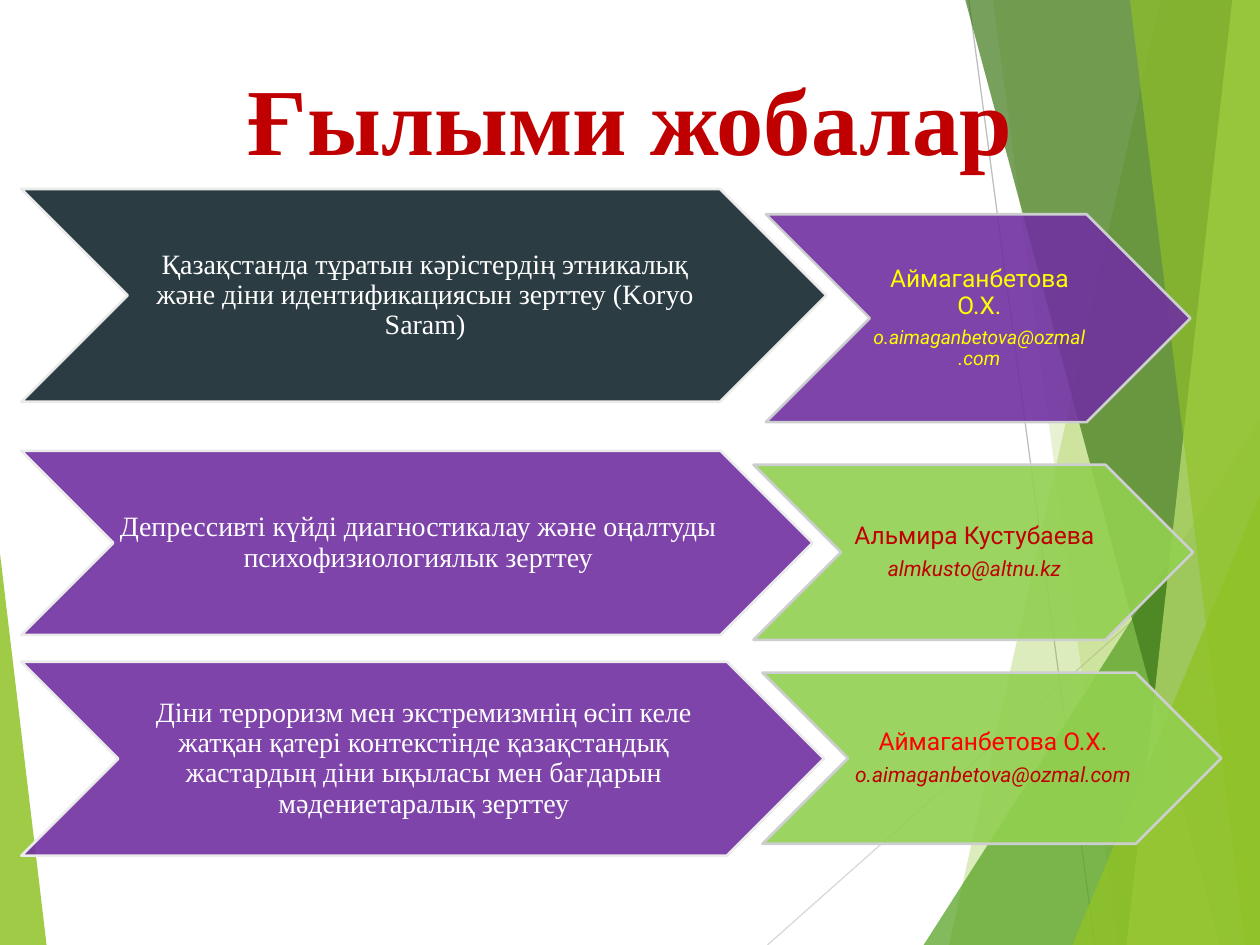
from lxml.etree import SubElement
from pptx import Presentation
from pptx.dml.color import RGBColor
from pptx.enum.shapes import MSO_CONNECTOR, MSO_SHAPE
from pptx.enum.text import MSO_ANCHOR, PP_ALIGN
from pptx.oxml.ns import qn
from pptx.util import Cm, Pt

WIDTH, HEIGHT = 25.4, 19.05

WHITE = RGBColor(0xFF, 0xFF, 0xFF)
YELLOW = RGBColor(0xFF, 0xFF, 0x00)
RED = RGBColor(0xFF, 0x00, 0x00)
DARK_RED = RGBColor(0xC0, 0x00, 0x00)
SLATE = RGBColor(0x2C, 0x3C, 0x43)
PURPLE = RGBColor(0x70, 0x30, 0xA0)
LIGHT_GREEN = RGBColor(0x92, 0xD0, 0x50)
LEAF = RGBColor(0x90, 0xC2, 0x26)
GRASS = RGBColor(0x54, 0xA0, 0x21)
FOREST = RGBColor(0x3F, 0x78, 0x19)
LIME = RGBColor(0xC0, 0xE4, 0x74)
TOPIC_EDGE = RGBColor(0xEB, 0xEB, 0xEB)
LEADER_EDGE = RGBColor(0xCD, 0xCE, 0xCF)
GREY = RGBColor(0xBF, 0xBF, 0xBF)
PALE_GREY = RGBColor(0xD9, 0xD9, 0xD9)

# Bands reaching the right edge: top x, bottom x, colour, opacity in percent
BACK_BANDS = [(23.39, 19.13, LEAF, 30), (20.02, 22.53, LEAF, 20)]
FRONT_BANDS = [(19.46, 24.59, FOREST, 70), (24.84, 22.71, LIME, 70),
               (22.78, 25.1, LEAF, 65)]

# Each line of text: wording, size, colour, italic
PROJECTS = [
    ("Қазақстанда тұратын кәрістердің этникалық және діни "
     "идентификациясын зерттеу (Koryo Saram)",
     (0.43, 3.81, 16.23, 4.29), SLATE, 100,
     [("Аймаганбетова О.Х.", 14, YELLOW, False),
      ("o.aimaganbetova@ozmal.com", 11, YELLOW, True)],
     (15.44, 4.32, 8.56, 4.19), PURPLE),
    ("Депрессивті күйді диагностикалау және оңалтуды "
     "психофизиологиялык зерттеу",
     (0.43, 9.09, 15.95, 3.71), PURPLE, 90,
     [("Альмира Кустубаева", 14, DARK_RED, False),
      ("almkusto@altnu.kz", 12, DARK_RED, True)],
     (15.19, 9.37, 8.86, 3.53), LIGHT_GREEN),
    ("Діни терроризм мен экстремизмнің өсіп келе жатқан қатері контекстінде "
     "қазақстандық жастардың діни ықыласы мен бағдарын мәдениетаралық зерттеу",
     (0.43, 13.34, 16.18, 3.91), PURPLE, 90,
     [("Аймаганбетова О.Х.", 14, RED, False),
      ("o.aimaganbetova@ozmal.com", 12, DARK_RED, True)],
     (15.37, 13.56, 9.25, 3.45), LIGHT_GREEN),
]


def paint(fill, color, opacity):
    """Fill with a solid colour; opacity is in percent."""
    fill.solid()
    fill.fore_color.rgb = color
    if opacity < 100:
        for rgb in fill._xPr.iter(qn("a:srgbClr")):
            SubElement(rgb, qn("a:alpha"), val=str(opacity * 1000))


class ProjectSlide:
    serif, sans = "Times New Roman", "Roboto"

    def __init__(self, deck):
        self.slide = deck.slides.add_slide(deck.slide_layouts[5])
        self.shapes = self.slide.shapes

    def thin_line(self, start, end, color):
        line = self.shapes.add_connector(
            MSO_CONNECTOR.STRAIGHT, *map(Cm, start), *map(Cm, end))
        line.line.color.rgb = color
        line.line.width = Pt(0.75)
        SubElement(line._element.spPr, qn("a:effectLst"))

    def decorate(self, shape, color, opacity):
        shape.shadow.inherit = False
        paint(shape.fill, color, opacity)
        shape.line.fill.background()

    def band(self, top, bottom, color, opacity):
        outline = self.shapes.build_freeform(Cm(top), 0)
        outline.add_line_segments(
            [(Cm(WIDTH), 0), (Cm(WIDTH), Cm(HEIGHT)), (Cm(bottom), Cm(HEIGHT))])
        self.decorate(outline.convert_to_shape(), color, opacity)

    def triangle(self, left, top, width, apex, color, opacity):
        """Triangle standing on the bottom edge; apex runs from 0 to 1."""
        corner = self.shapes.add_shape(
            MSO_SHAPE.ISOSCELES_TRIANGLE,
            Cm(left), Cm(top), Cm(width), Cm(HEIGHT - top))
        corner.adjustments[0] = apex
        self.decorate(corner, color, opacity)

    def title(self, wording):
        title = self.shapes.title
        title.left, title.top = Cm(1.75), Cm(1.02)
        title.width, title.height = Cm(21.9), Cm(2.62)
        title.text_frame.text = wording
        title.text_frame.vertical_anchor = MSO_ANCHOR.BOTTOM
        heading = title.text_frame.paragraphs[0]
        heading.alignment = PP_ALIGN.CENTER
        font = heading.font
        font.name, font.size, font.bold = self.serif, Pt(54), True
        font.color.rgb = DARK_RED
        # Bring the title in front of the decoration
        self.shapes._spTree.append(title._element)

    def chevron(self, box, color, opacity, edge, lines, typeface):
        chevron = self.shapes.add_shape(MSO_SHAPE.CHEVRON, *map(Cm, box))
        chevron.shadow.inherit = False
        paint(chevron.fill, color, opacity)
        chevron.line.color.rgb = edge
        chevron.line.width = Pt(1.5)
        frame = chevron.text_frame
        frame.word_wrap = True
        frame.vertical_anchor = MSO_ANCHOR.MIDDLE
        frame.margin_left, frame.margin_right = Cm(0.05), 0
        frame.margin_top = frame.margin_bottom = Cm(0.03)
        frame.text = "\n".join(wording for wording, *_ in lines)
        for paragraph, (_, size, ink, italic) in zip(frame.paragraphs, lines):
            paragraph.alignment = PP_ALIGN.CENTER
            paragraph.line_spacing = 0.9
            paragraph.space_after = Pt(0.35 * size)
            font = paragraph.font
            font.name, font.size, font.italic = typeface, Pt(size), italic
            font.color.rgb = ink

    def project(self, topic, topic_box, topic_color, topic_opacity,
                leader, leader_box, leader_color):
        self.chevron(topic_box, topic_color, topic_opacity, TOPIC_EDGE,
                     [(topic, 16, WHITE, False)], self.serif)
        self.chevron(leader_box, leader_color, 90, LEADER_EDGE,
                     leader, self.sans)


def main():
    deck = Presentation()
    deck.slide_width, deck.slide_height = Cm(WIDTH), Cm(HEIGHT)
    page = ProjectSlide(deck)

    page.thin_line((19.53, 0), (22.07, HEIGHT), GREY)
    page.thin_line((WIDTH, 10.24), (15.47, HEIGHT), PALE_GREY)
    for band in BACK_BANDS:
        page.band(*band)
    page.triangle(18.62, 8.46, 6.78, 1, GRASS, 72)
    for band in FRONT_BANDS:
        page.band(*band)
    page.triangle(21.62, 9.98, 3.78, 1, LEAF, 80)
    page.triangle(0, 11.15, 0.94, 0, LEAF, 85)

    page.title("Ғылыми жобалар")
    for project in PROJECTS:
        page.project(*project)
    deck.save("out.pptx")


if __name__ == "__main__":
    main()
